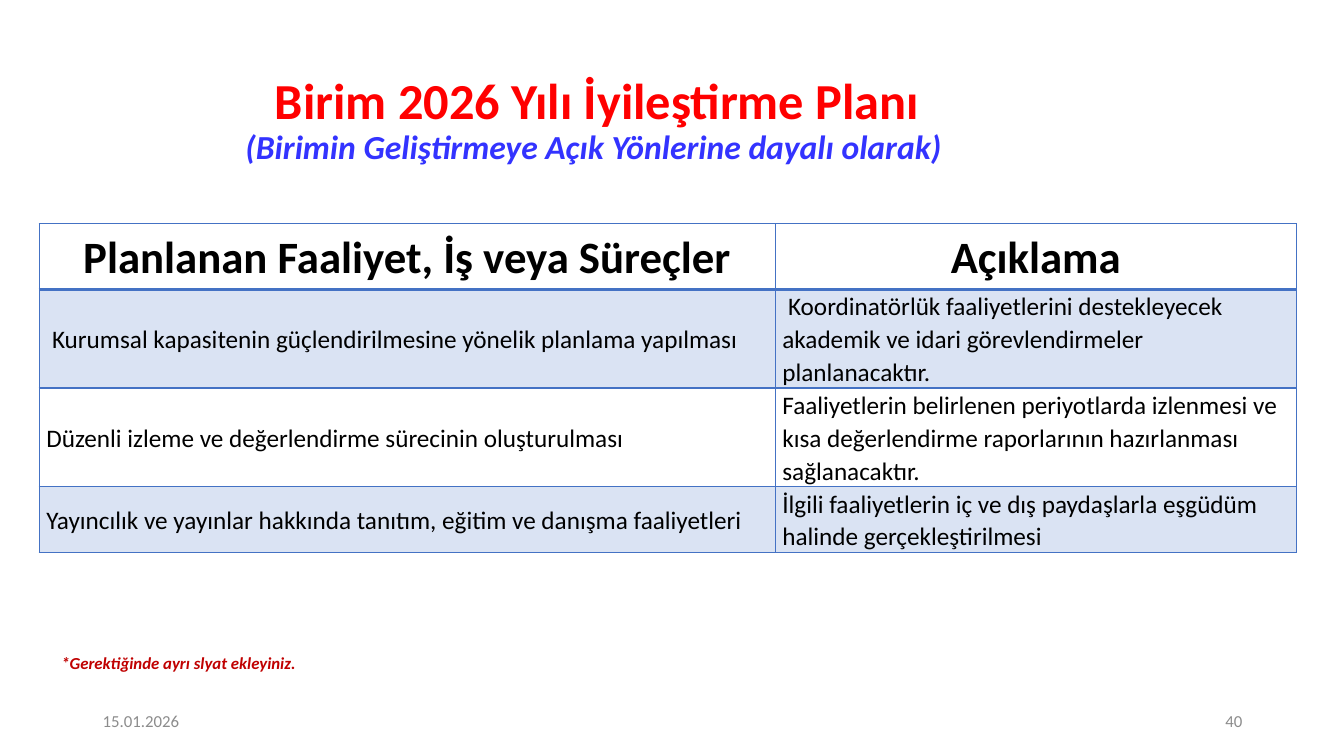
from lxml.etree import SubElement
from pptx import Presentation
from pptx.dml.color import RGBColor
from pptx.enum.text import MSO_ANCHOR as Anchor, PP_ALIGN as Align
from pptx.oxml.ns import qn
from pptx.util import Inches, Pt

COLORS = {
    "title": "FF0000",
    "subtitle": "3333FF",
    "footer": "8C8C8C",
    "note": "C00000",
    "text": "000000",
    "border": "4472C4",
    "band": "DAE3F3",
}


def write(frame, text, size, color, bold=False, italic=False,
          align=Align.LEFT, spacing=None, anchor=Anchor.MIDDLE):
    frame.word_wrap = True
    frame.vertical_anchor = anchor
    para = frame.paragraphs[0]
    para.alignment = align
    if spacing:
        para.line_spacing = spacing
    span = para.add_run()
    span.text = text
    font = span.font
    font.name, font.size, font.bold, font.italic = "Calibri", Pt(size), bold, italic
    font.color.rgb = RGBColor.from_string(COLORS[color])
    return para


def add_border(cell, side, width):
    line = SubElement(cell._tc.get_or_add_tcPr(), qn(f"a:ln{side}"), w=str(Pt(width)))
    fill = SubElement(line, qn("a:solidFill"))
    SubElement(fill, qn("a:srgbClr"), val=COLORS["border"])


deck = Presentation()
deck.slide_width, deck.slide_height = Inches(13.33), Inches(7.5)
page = deck.slides.add_slide(deck.slide_layouts[6])

title = page.shapes.add_textbox(Inches(0.3), Inches(0.78), Inches(11.25), Inches(0.84))
heading = write(title.text_frame, "Birim 2026 Yılı İyileştirme Planı", 36, "title",
                bold=True, align=Align.CENTER, spacing=0.9)
heading.add_line_break()
write(title.text_frame, "(Birimin Geliştirmeye Açık Yönlerine dayalı olarak) ", 24,
      "subtitle", bold=True, italic=True, align=Align.CENTER, spacing=0.9)

for left, text, align in [(0.92, "15.01.2026", Align.LEFT), (9.42, "40", Align.RIGHT)]:
    box = page.shapes.add_textbox(Inches(left), Inches(6.95), Inches(3), Inches(0.4))
    write(box.text_frame, text, 12, "footer", align=align)

plan = [
    ("Planlanan Faaliyet, İş veya Süreçler", "Açıklama"),
    (" Kurumsal kapasitenin güçlendirilmesine yönelik planlama yapılması",
     " Koordinatörlük faaliyetlerini destekleyecek akademik ve idari görevlendirmeler planlanacaktır."),
    ("Düzenli izleme ve değerlendirme sürecinin oluşturulması",
     "Faaliyetlerin belirlenen periyotlarda izlenmesi ve kısa değerlendirme raporlarının hazırlanması sağlanacaktır."),
    ("Yayıncılık ve yayınlar hakkında tanıtım, eğitim ve danışma faaliyetleri",
     "İlgili faaliyetlerin iç ve dış paydaşlarla eşgüdüm halinde gerçekleştirilmesi"),
]
table = page.shapes.add_table(len(plan), 2, Inches(0.39), Inches(2.22),
                              Inches(12.47), Inches(3.26)).table
table.first_row = table.horz_banding = False
for column, width in zip(table.columns, [7.3, 5.17]):
    column.width = Inches(width)
for row, height in zip(table.rows, [0.65, 0.98, 0.98, 0.65]):
    row.height = Inches(height)

for index, texts in enumerate(plan):
    header = index == 0
    for cell, text in zip(table.rows[index].cells, texts):
        cell.margin_left = cell.margin_right = Inches(0.07)
        cell.margin_top = cell.margin_bottom = 0
        cell.vertical_anchor = Anchor.MIDDLE
        for side in "LRTB":
            under_header = (index, side) in [(0, "B"), (1, "T")]
            add_border(cell, side, 2 if under_header else 1)
        if index % 2:
            cell.fill.solid()
            cell.fill.fore_color.rgb = RGBColor.from_string(COLORS["band"])
        else:
            cell.fill.background()
        write(cell.text_frame, text, 32 if header else 18, "text", bold=header,
              align=Align.CENTER if header else Align.LEFT, spacing=1.07)

note = page.shapes.add_textbox(Inches(0.51), Inches(6.43), Inches(5), Inches(0.3))
write(note.text_frame, "*Gerektiğinde ayrı slyat ekleyiniz.", 12, "note",
      bold=True, italic=True, anchor=Anchor.TOP)

deck.save("out.pptx")
